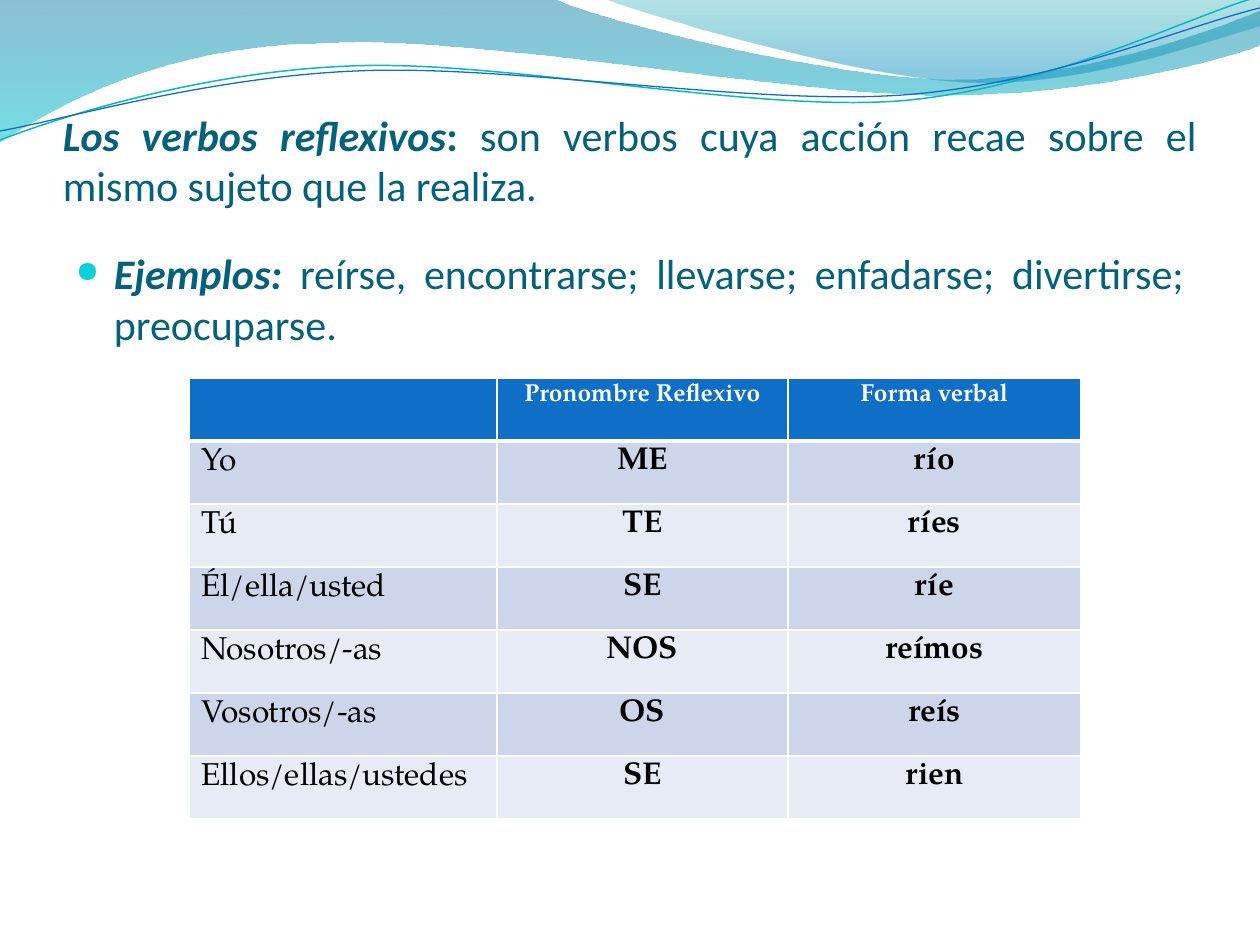
from dataclasses import dataclass
from typing import Optional

from lxml.etree import SubElement
from pptx import Presentation
from pptx.dml.color import RGBColor
from pptx.enum.text import MSO_ANCHOR as Anchor, PP_ALIGN as Align
from pptx.oxml.ns import qn
from pptx.util import Pt

EMU_PER_PX = 914400 / 126


@dataclass(frozen=True)
class Theme:
    text: str = "04617B"
    bullet: str = "0BD0D9"
    header: str = "0F6FC6"
    bands: tuple = ("CCD5EA", "E7EBF5")
    white: str = "FFFFFF"
    black: str = "000000"
    teal_line: str = "0AB8BF"
    blue_line: str = "0F6FC6"
    body_font: str = "Calibri"
    table_font: str = "TeX Gyre Pagella"
    body_size: int = 24
    header_size: int = 14
    cell_size: int = 18
    bullet_percent: int = 70


THEME = Theme()


@dataclass(frozen=True)
class Stop:
    position: float
    color: str
    opacity: int


@dataclass(frozen=True)
class Wave:
    """Start point, then segments: 2 numbers for a line, 6 for a curve."""
    start: tuple
    segments: tuple
    stops: tuple = ()
    line: Optional[str] = None
    width: float = 0


WAVES = (
    Wave((0, 0), ((554, -1),
                  (600, 21, 837, 79, 955, 79), (1075, 79, 1207, 33, 1260, 11),
                  (1261, 45),
                  (1239, 55, 1096, 96, 940, 95), (784, 95, 481, 35, 324, 43),
                  (163, 45, 58, 105, -1, 142), (0, 0)),
         stops=(Stop(0, "0074A1", 45), Stop(1, "00C6CF", 55))),
    Wave((604, -1), ((641, 14, 859, 78, 969, 82), (1079, 87, 1211, 40, 1260, 26),
                     (1260, 0), (604, -1)),
         stops=(Stop(0, "00A1A9", 30), Stop(0.8, "008BBF", 45))),
    Wave((0, 140), ((60, 117, 199, 72, 349, 66), (498, 59, 747, 112, 898, 101),
                    (1048, 89, 1182, 19, 1257, -3)),
         line=THEME.teal_line, width=0.85),
    Wave((0, 131), ((59, 121, 207, 77, 357, 71), (508, 64, 752, 106, 903, 95),
                    (1053, 84, 1185, 26, 1260, 8)),
         line=THEME.blue_line, width=0.75),
)

COLUMN_WIDTHS = (308, 291, 293)
ROW_HEIGHT = 63
ROWS = (
    ("", "Pronombre Reflexivo", "Forma verbal"),
    ("Yo", "ME", "río"),
    ("Tú", "TE", "ríes"),
    ("Él/ella/usted", "SE", "ríe"),
    ("Nosotros/-as", "NOS", "reímos"),
    ("Vosotros/-as", "OS", "reís"),
    ("Ellos/ellas/ustedes", "SE", "rien"),
)


def px(value: float) -> int:
    return round(value * EMU_PER_PX)


def rgb(color: str) -> RGBColor:
    return RGBColor.from_string(color)


def add_text(paragraph, text: str, *, size: float, font: str, color: str,
             bold: bool = False, italic: bool = False) -> None:
    run = paragraph.add_run()
    run.text = text
    run.font.size, run.font.name = Pt(size), font
    run.font.bold, run.font.italic = bold, italic
    run.font.color.rgb = rgb(color)


def curve_segments(shape, wave: Wave) -> None:
    """Join each three control points of a curve into one cubic segment."""
    lines = iter(list(shape._element.iter(qn("a:lnTo"))))
    for segment in wave.segments:
        first = next(lines)
        if len(segment) == 6:
            curve = first.makeelement(qn("a:cubicBezTo"))
            first.addprevious(curve)
            for line in (first, next(lines), next(lines)):
                curve.append(line[0])
                line.getparent().remove(line)


def draw_wave(slide, wave: Wave) -> None:
    points = [(px(segment[i]), px(segment[i + 1]))
              for segment in wave.segments for i in range(0, len(segment), 2)]
    builder = slide.shapes.build_freeform(*map(px, wave.start))
    builder.add_line_segments(points, close=bool(wave.stops))
    shape = builder.convert_to_shape()
    curve_segments(shape, wave)
    shape.shadow.inherit = False
    if not wave.stops:
        shape.fill.background()
        shape.line.color.rgb = rgb(wave.line)
        shape.line.width = Pt(wave.width)
        return
    shape.line.fill.background()
    shape.fill.gradient()
    shape.fill.gradient_angle = 270
    for target, stop in zip(shape.fill.gradient_stops, wave.stops):
        target.position, target.color.rgb = stop.position, rgb(stop.color)
    for element, stop in zip(shape._element.spPr.iter(qn("a:srgbClr")), wave.stops):
        SubElement(element, qn("a:alpha"), val=str(stop.opacity * 1000))


def draw_statement(slide, box: tuple, margins: tuple, anchor: Anchor,
                   lead: str, colon: str, rest: str):
    """A justified paragraph that opens with a bold italic lead."""
    frame = slide.shapes.add_textbox(*map(px, box)).text_frame
    frame.word_wrap, frame.vertical_anchor = True, anchor
    (frame.margin_left, frame.margin_top,
     frame.margin_right, frame.margin_bottom) = map(px, margins)
    paragraph = frame.paragraphs[0]
    paragraph.alignment = Align.JUSTIFY
    style = dict(size=THEME.body_size, font=THEME.body_font, color=THEME.text)
    add_text(paragraph, lead, bold=True, italic=True, **style)
    if colon:
        add_text(paragraph, colon, bold=True, **style)
    add_text(paragraph, rest, **style)
    return paragraph


def add_bullet(paragraph, indent: int) -> None:
    properties = paragraph._p.get_or_add_pPr()
    properties.set("marL", str(px(indent)))
    properties.set("indent", str(-px(indent)))
    color = SubElement(properties, qn("a:buClr"))
    SubElement(color, qn("a:srgbClr"), val=THEME.bullet)
    SubElement(properties, qn("a:buSzPct"), val=str(THEME.bullet_percent * 1000))
    SubElement(properties, qn("a:buChar"), char="●")


def add_border(cell, side: str, width: float) -> None:
    properties = cell._tc.get_or_add_tcPr()
    line = SubElement(properties, qn(f"a:ln{side}"), w=str(Pt(width)))
    fill = SubElement(line, qn("a:solidFill"))
    SubElement(fill, qn("a:srgbClr"), val=THEME.white)


def draw_table(slide, left: int, top: int) -> None:
    table = slide.shapes.add_table(
        len(ROWS), len(COLUMN_WIDTHS), px(left), px(top),
        px(sum(COLUMN_WIDTHS)), px(ROW_HEIGHT * len(ROWS))).table
    table.horz_banding = False
    for column, width in zip(table.columns, COLUMN_WIDTHS):
        column.width = px(width)
    for r, texts in enumerate(ROWS):
        table.rows[r].height = px(ROW_HEIGHT)
        header = r == 0
        for c, text in enumerate(texts):
            cell = table.cell(r, c)
            for side in "LRTB":
                thick = (r, side) in ((0, "B"), (1, "T"))
                add_border(cell, side, 3 if thick else 1)
            cell.fill.solid()
            cell.fill.fore_color.rgb = rgb(THEME.header if header else THEME.bands[(r - 1) % 2])
            if text:
                paragraph = cell.text_frame.paragraphs[0]
                paragraph.alignment = Align.CENTER if c else Align.LEFT
                add_text(paragraph, text, font=THEME.table_font, bold=header or c > 0,
                         size=THEME.header_size if header else THEME.cell_size,
                         color=THEME.white if header else THEME.black)


def main() -> None:
    presentation = Presentation()
    presentation.slide_width, presentation.slide_height = px(1260), px(945)
    slide = presentation.slides.add_slide(presentation.slide_layouts[6])

    # Waves along the top
    for wave in WAVES:
        draw_wave(slide, wave)

    # Definition and examples
    draw_statement(slide, (63, 97, 1134, 113), (0, 6, 0, 0), Anchor.BOTTOM,
                   "Los verbos reflexivos", ": ",
                   "son verbos cuya acción recae sobre el mismo sujeto que la realiza. ")
    examples = draw_statement(
        slide, (63, 242, 1134, 630), (13, 6, 13, 6), Anchor.TOP, "Ejemplos: ", "",
        "reírse, encontrarse; llevarse; enfadarse; divertirse; preocuparse. ")
    add_bullet(examples, 38)

    # Conjugation table
    draw_table(slide, 189, 378)
    presentation.save("out.pptx")


if __name__ == "__main__":
    main()
